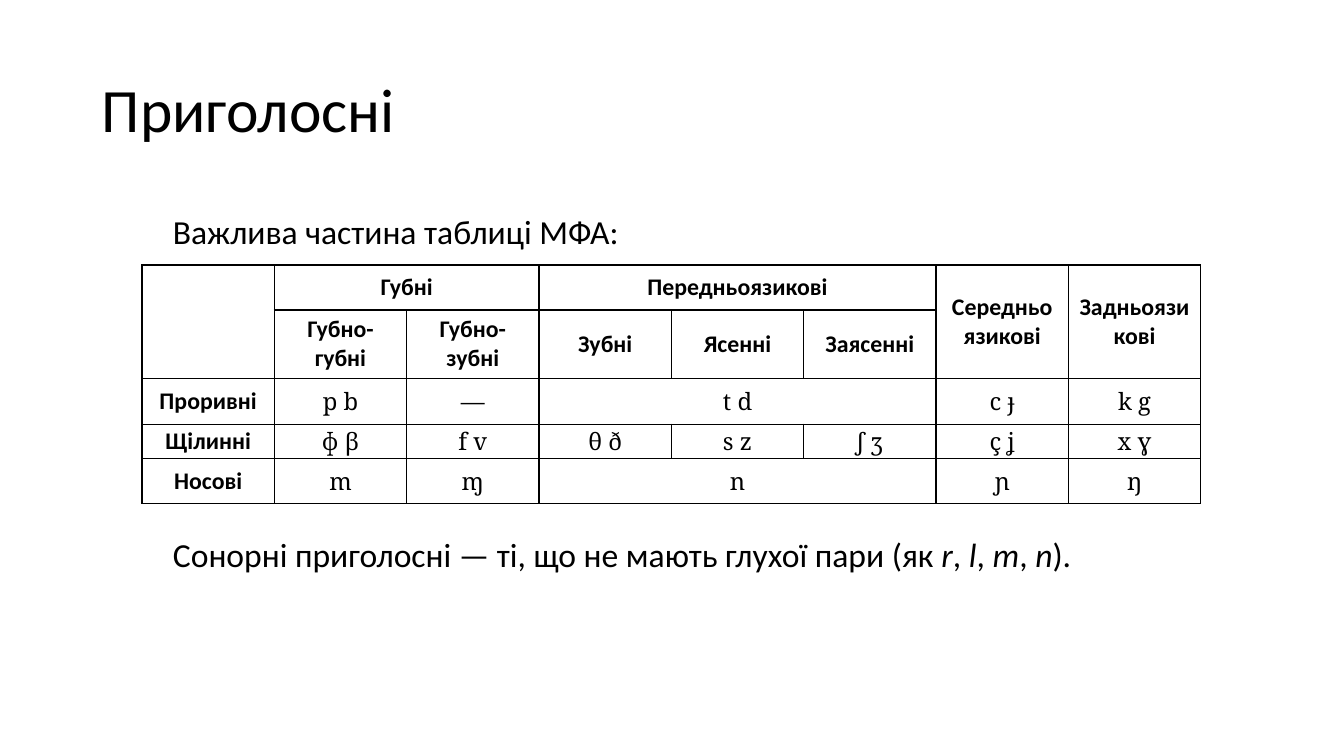
from dataclasses import dataclass

from lxml import etree
from pptx import Presentation
from pptx.dml.color import RGBColor
from pptx.enum.text import MSO_ANCHOR, MSO_AUTO_SIZE, PP_ALIGN
from pptx.oxml.ns import qn
from pptx.util import Emu, Pt

MIDDLE, TOP = MSO_ANCHOR.MIDDLE, MSO_ANCHOR.TOP
CENTER = PP_ALIGN.CENTER
GROW, FIXED = MSO_AUTO_SIZE.SHAPE_TO_FIT_TEXT, MSO_AUTO_SIZE.NONE

# Content
TITLE = [("Приголосні", False)]
INTRO = [("Важлива частина таблиці МФА:", False)]
SONORANTS = [
    ("Сонорні приголосні — ті, що не мають глухої пари (як ", False),
    ("r", True), (", ", False), ("l", True), (", ", False),
    ("m", True), (", ", False), ("n", True), (").", False),
]
CONSONANTS = [
    ["", "Губні", "", "Передньоязикові", "", "", "Середньоязикові", "Задньоязикові"],
    ["", "Губно-губні", "Губно-зубні", "Зубні", "Ясенні", "Заясенні", "", ""],
    ["Проривні", "p b", "—", "t d", "", "", "c ɟ", "k g"],
    ["Щілинні", "ɸ β", "f v", "θ ð", "s z", "ʃ ʒ", "ç ʝ", "x ɣ"],
    ["Носові", "m", "ɱ", "n", "", "", "ɲ", "ŋ"],
]
HEADER_ROWS = 2
# (row, column): (rows spanned, columns spanned)
SPANS = {
    (0, 0): (2, 1), (0, 1): (1, 2), (0, 3): (1, 3), (0, 6): (2, 1),
    (0, 7): (2, 1), (2, 3): (1, 3), (4, 3): (1, 3),
}

# Layout in px: left, top, width, height
SLIDE_SIZE = (1344, 756)
TITLE_BOX = (92, 40, 1159, 146)
INTRO_BOX = (163, 206, 587, 50)
SONORANTS_BOX = (163, 529, 982, 50)
TABLE_LEFT, TABLE_TOP, TABLE_WIDTH = 142, 265, 1059
ROW_HEIGHTS = [45, 58, 46, 30, 45]
CELL_MARGINS = (13, 1)
SPAN_MARGINS = (11, 5)


@dataclass(frozen=True)
class Theme:
    ink: str = "000000"
    paper: str = "FFFFFF"
    text_font: str = "Calibri"
    sound_font: str = "Noto Serif"
    title_size: int = 44
    body_size: int = 24
    table_size: int = 17
    border_width: int = 1


THEME = Theme()


def px(length):
    return Emu(round(length * 914400 / 100.8))


def add_run(paragraph, text, size, font=THEME.text_font, bold=False, italic=False):
    run = paragraph.add_run()
    run.text = text
    run.font.name = font
    run.font.size = Pt(size)
    run.font.bold = bold
    run.font.italic = italic
    run.font.color.rgb = RGBColor.from_string(THEME.ink)


def add_text(slide, box, runs, size, anchor=TOP, auto_size=GROW, line_spacing=1.0):
    frame = slide.shapes.add_textbox(*map(px, box)).text_frame
    frame.word_wrap = True
    frame.auto_size = auto_size
    frame.vertical_anchor = anchor
    paragraph = frame.paragraphs[0]
    paragraph.line_spacing = line_spacing
    for text, italic in runs:
        add_run(paragraph, text, size, italic=italic)


def add_borders(cell):
    properties = cell._tc.get_or_add_tcPr()
    for side in ("a:lnL", "a:lnR", "a:lnT", "a:lnB"):
        line = etree.SubElement(properties, qn(side), w=str(Pt(THEME.border_width)))
        fill = etree.SubElement(line, qn("a:solidFill"))
        etree.SubElement(fill, qn("a:srgbClr"), val=THEME.ink)


def add_consonant_table(slide):
    column_count = len(CONSONANTS[0])
    table = slide.shapes.add_table(
        len(CONSONANTS), column_count, px(TABLE_LEFT), px(TABLE_TOP),
        px(TABLE_WIDTH), px(sum(ROW_HEIGHTS))).table
    table.first_row = table.horz_banding = False
    for column in table.columns:
        column.width = px(TABLE_WIDTH / column_count)
    for row, height in zip(table.rows, ROW_HEIGHTS):
        row.height = px(height)

    for row_index, labels in enumerate(CONSONANTS):
        for column_index, label in enumerate(labels):
            cell = table.cell(row_index, column_index)
            add_borders(cell)
            cell.fill.background()
            cell.vertical_anchor = MIDDLE
            spanned = (row_index, column_index) in SPANS
            across, down = SPAN_MARGINS if spanned else CELL_MARGINS
            cell.margin_left = cell.margin_right = px(across)
            cell.margin_top = cell.margin_bottom = px(down)
            if label:
                heading = row_index < HEADER_ROWS or column_index == 0
                paragraph = cell.text_frame.paragraphs[0]
                paragraph.alignment = CENTER
                font = THEME.text_font if heading else THEME.sound_font
                add_run(paragraph, label, THEME.table_size, font, bold=heading)

    for (row, column), (rows, columns) in SPANS.items():
        last_cell = table.cell(row + rows - 1, column + columns - 1)
        table.cell(row, column).merge(last_cell)


def main():
    presentation = Presentation()
    presentation.slide_width, presentation.slide_height = map(px, SLIDE_SIZE)
    slide = presentation.slides.add_slide(presentation.slide_layouts[6])
    slide.background.fill.solid()
    slide.background.fill.fore_color.rgb = RGBColor.from_string(THEME.paper)

    # Title
    add_text(slide, TITLE_BOX, TITLE, THEME.title_size, MIDDLE, FIXED, 0.9)
    # Table with the lines below and above it
    add_consonant_table(slide)
    add_text(slide, SONORANTS_BOX, SONORANTS, THEME.body_size)
    add_text(slide, INTRO_BOX, INTRO, THEME.body_size)

    presentation.save("out.pptx")


if __name__ == "__main__":
    main()
